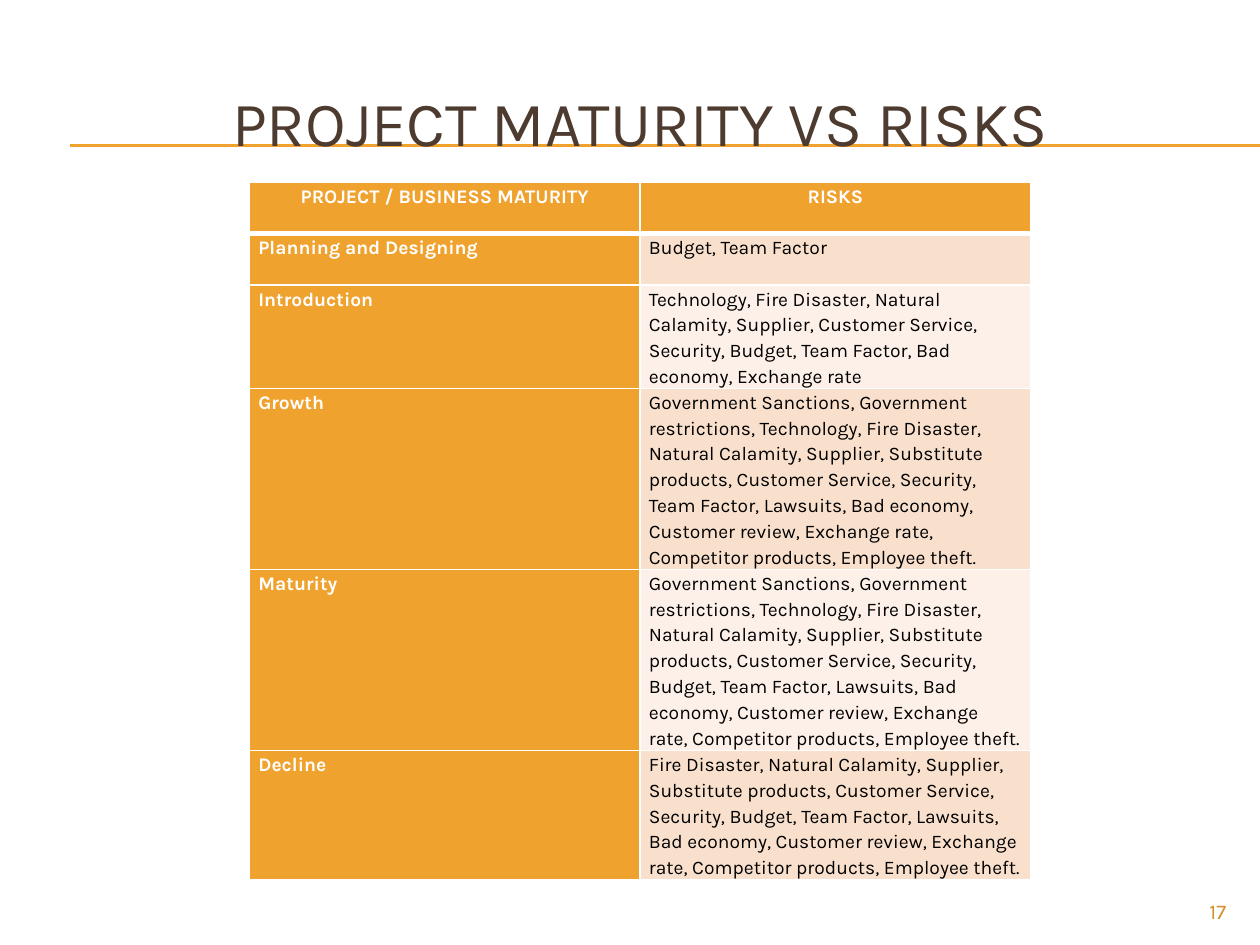
from dataclasses import dataclass
from lxml.etree import SubElement
from pptx import Presentation
from pptx.dml.color import RGBColor
from pptx.enum.text import MSO_ANCHOR, PP_ALIGN
from pptx.oxml.ns import qn
from pptx.util import Pt

# Content
TITLE = "PROJECT MATURITY VS RISKS"
PAGE = "17"
HEADER = ("PROJECT / BUSINESS MATURITY", "RISKS")
# stage, risks, row height
STAGES = [
    ("Planning and Designing", "Budget, Team Factor", 29.5),
    ("Introduction",
     "Technology, Fire Disaster, Natural Calamity, Supplier, Customer Service, "
     "Security, Budget, Team Factor, Bad economy, Exchange rate", 59),
    ("Growth",
     "Government Sanctions, Government restrictions, Technology, Fire Disaster, "
     "Natural Calamity, Supplier, Substitute products, Customer Service, Security, "
     "Team Factor, Lawsuits, Bad economy, Customer review, Exchange rate, "
     "Competitor products, Employee theft.", 103.5),
    ("Maturity",
     "Government Sanctions, Government restrictions, Technology, Fire Disaster, "
     "Natural Calamity, Supplier, Substitute products, Customer Service, Security, "
     "Budget, Team Factor, Lawsuits, Bad economy, Customer review, Exchange rate, "
     "Competitor products, Employee theft.", 103.5),
    ("Decline",
     "Fire Disaster, Natural Calamity, Supplier, Substitute products, Customer "
     "Service, Security, Budget, Team Factor, Lawsuits, Bad economy, Customer "
     "review, Exchange rate, Competitor products, Employee theft.", 73.5),
]
HEADER_H = 29
COL_W = 223.2


@dataclass(frozen=True)
class Theme:
    font: str = "Karla"
    accent: str = "F0A22E"
    title: str = "4E3B30"
    number: str = "D48F29"
    white: str = "FFFFFF"
    black: str = "000000"
    bands: tuple = ("F9E0CD", "FCF0E8")
    title_size: float = 36
    body_size: float = 11
    number_size: float = 12


T = Theme()


def rgb(value):
    return RGBColor.from_string(value)


def write(tf, text, size, color, align, bold=False):
    tf.text = text
    p = tf.paragraphs[0]
    p.alignment = align
    f = p.runs[0].font
    f.name, f.size, f.bold = T.font, Pt(size), bold
    f.color.rgb = rgb(color)
    return p


def set_borders(cell, top, bottom):
    tc_pr = cell._tc.get_or_add_tcPr()
    widths = {"a:lnL": 1, "a:lnR": 1, "a:lnT": top, "a:lnB": bottom}
    for tag, width in widths.items():
        ln = SubElement(tc_pr, qn(tag), w=str(Pt(width)))
        fill = SubElement(ln, qn("a:solidFill"))
        SubElement(fill, qn("a:srgbClr"), val=T.white)


def add_rule(s, y):
    line = s.shapes.add_connector(1, Pt(40.3), Pt(y), Pt(720), Pt(y))
    line.line.color.rgb = rgb(T.accent)
    line.line.width = Pt(0.75)
    SubElement(line._element.spPr, qn("a:effectLst"))


def add_risk_table(s):
    rows = [(*HEADER, HEADER_H), *STAGES]
    height = sum(row[2] for row in rows)
    frame = s.shapes.add_table(len(rows), 2, Pt(142.6), Pt(104.4),
                               Pt(2 * COL_W), Pt(height))
    table = frame.table
    for i, (*texts, row_h) in enumerate(rows):
        table.rows[i].height = Pt(row_h)
        for j, text in enumerate(texts):
            cell = table.cell(i, j)
            heading = i == 0 or j == 0
            # Thick rule below the header row
            set_borders(cell, 3 if i == 1 else 1, 3 if i == 0 else 1)
            cell.fill.solid()
            cell.fill.fore_color.rgb = rgb(T.accent if heading else T.bands[(i - 1) % 2])
            cell.margin_left = cell.margin_right = Pt(5)
            cell.margin_top = cell.margin_bottom = 0
            p = write(cell.text_frame, text, T.body_size,
                      T.white if heading else T.black,
                      PP_ALIGN.CENTER if i == 0 else PP_ALIGN.LEFT, heading)
            p.line_spacing = 1.15


def main():
    prs = Presentation()
    prs.slide_width, prs.slide_height = Pt(720), Pt(540)
    s = prs.slides.add_slide(prs.slide_layouts[5])

    # Title
    title = s.shapes.title
    title.left, title.top, title.width, title.height = Pt(23.8), Pt(36), Pt(684), Pt(66.2)
    title.text_frame.vertical_anchor = MSO_ANCHOR.MIDDLE
    write(title.text_frame, TITLE, T.title_size, T.title, PP_ALIGN.CENTER)

    # Double rule behind the title
    for y in (82.8, 83.5):
        add_rule(s, y)
    tree = s.shapes._spTree
    tree.remove(title._element)
    tree.append(title._element)

    add_risk_table(s)

    # Page number
    box = s.shapes.add_textbox(Pt(648), Pt(509.8), Pt(59.8), Pt(19.4))
    box.text_frame.word_wrap = True
    write(box.text_frame, PAGE, T.number_size, T.number, PP_ALIGN.RIGHT)

    prs.save("out.pptx")


if __name__ == "__main__":
    main()
